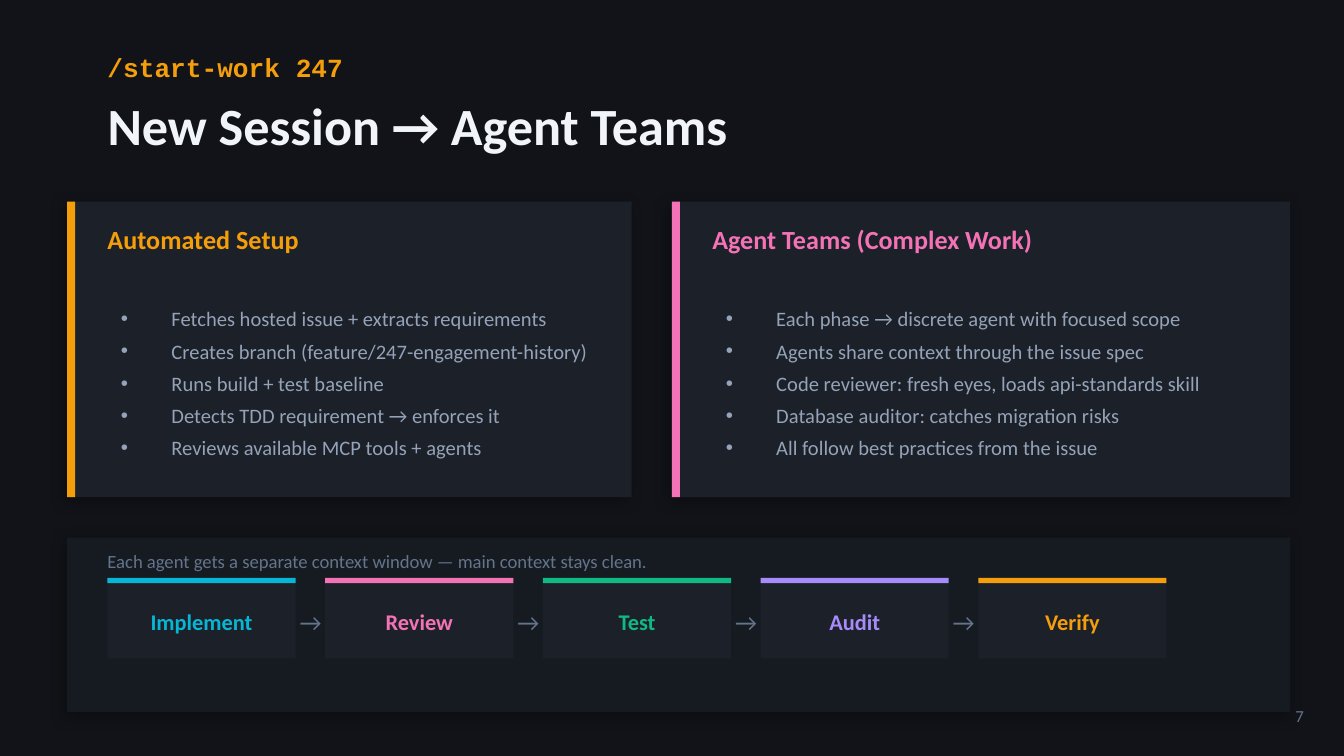
from lxml.etree import SubElement
from pptx import Presentation
from pptx.dml.color import RGBColor
from pptx.enum.shapes import MSO_SHAPE
from pptx.enum.text import MSO_ANCHOR, MSO_AUTO_SIZE, PP_ALIGN
from pptx.oxml.ns import qn
from pptx.util import Inches, Pt

BACKDROP = RGBColor(0x11, 0x13, 0x18)
CARD = RGBColor(0x1C, 0x20, 0x28)
PANEL = RGBColor(0x16, 0x1B, 0x22)
WHITE = RGBColor(0xF1, 0xF5, 0xF9)
BODY = RGBColor(0x94, 0xA3, 0xB8)
MUTED = RGBColor(0x64, 0x74, 0x8B)
AMBER = RGBColor(0xF5, 0x9E, 0x0B)
PINK = RGBColor(0xF4, 0x72, 0xB6)
CYAN = RGBColor(0x06, 0xB6, 0xD4)
GREEN = RGBColor(0x10, 0xB9, 0x81)
VIOLET = RGBColor(0xA7, 0x8B, 0xFA)

CELL = Inches(0.1)
SETUP = [
    "Fetches hosted issue + extracts requirements",
    "Creates branch (feature/247-engagement-history)",
    "Runs build + test baseline",
    "Detects TDD requirement → enforces it",
    "Reviews available MCP tools + agents",
]
TEAMS = [
    "Each phase → discrete agent with focused scope",
    "Agents share context through the issue spec",
    "Code reviewer: fresh eyes, loads api-standards skill",
    "Database auditor: catches migration risks",
    "All follow best practices from the issue",
]
PHASES = [("Implement", CYAN), ("Review", PINK), ("Test", GREEN),
          ("Audit", VIOLET), ("Verify", AMBER)]


def grid(*cells):
    """Convert grid columns and rows to slide lengths."""
    return [round(c * CELL) for c in cells]


def add_block(s, box, color, shadow=False):
    """Add a borderless rectangle, optionally with a soft shadow."""
    sp = s.shapes.add_shape(MSO_SHAPE.RECTANGLE, *grid(*box))
    sp.shadow.inherit = False
    sp.fill.solid()
    sp.fill.fore_color.rgb = color
    sp.line.fill.background()
    if shadow:
        effects = sp.element.spPr.find(qn("a:effectLst"))
        outer = SubElement(effects, qn("a:outerShdw"), blurRad=str(Pt(8)),
                           dist=str(Pt(3)), dir="8100000", algn="bl",
                           rotWithShape="0")
        black = SubElement(outer, qn("a:srgbClr"), val="000000")
        SubElement(black, qn("a:alpha"), val="30000")


def format_text(tf, size, color, bold=False, font="Calibri", align=PP_ALIGN.LEFT, inset=0):
    """Apply frame settings and one run style to all paragraphs."""
    tf.word_wrap = True
    tf.auto_size = MSO_AUTO_SIZE.NONE
    tf.vertical_anchor = MSO_ANCHOR.MIDDLE
    tf.margin_left = tf.margin_right = Inches(inset)
    tf.margin_top = tf.margin_bottom = Inches(inset / 2)
    for p in tf.paragraphs:
        p.alignment = align
        for r in p.runs:
            r.font.name = font
            r.font.size = Pt(size)
            r.font.bold = bold
            r.font.color.rgb = color


def add_label(s, box, text, size, color, **style):
    """Add a formatted text box."""
    tf = s.shapes.add_textbox(*grid(*box)).text_frame
    tf.text = text
    format_text(tf, size, color, **style)


def place(sp, box):
    """Move a placeholder to a box and bring it to the front."""
    sp.left, sp.top, sp.width, sp.height = grid(*box)
    sp.element.getparent().append(sp.element)


def build_header(s, box):
    """Place the command line and the slide title."""
    x, y, w, h = box
    add_label(s, (x, y, 50, 4), "/start-work 247", 14, AMBER,
              bold=True, font="Courier New")
    title = s.shapes.title
    place(title, (x, y + 3.5, w, h - 3.5))
    title.text_frame.text = "New Session → Agent Teams"
    format_text(title.text_frame, 28, WHITE, bold=True)


def build_card(s, box, body, heading, items, color):
    """Place a card with an accent edge, a heading and a bullet list."""
    x, y, w, h = box
    add_block(s, box, CARD, shadow=True)
    add_block(s, (x, y, 0.6, h), color)
    add_label(s, (x + 3, y + 1, w - 4, 3.5), heading, 14, color, bold=True)
    place(body, (x + 3, y + 6, w - 5, h - 7))
    tf = body.text_frame
    tf.text = "\n".join(items)
    for p in tf.paragraphs:
        pPr = p._p.get_or_add_pPr()
        pPr.set("marL", str(Pt(27)))
        pPr.set("indent", str(-Pt(27)))
        SubElement(pPr, qn("a:buChar"), char="•")
        p.space_before = Pt(0)
        p.space_after = Pt(4)
    format_text(tf, 11, BODY, inset=0.1)


def build_phase(s, box, name, color):
    """Place one phase tile with its top accent and name."""
    x, y, w, h = box
    add_block(s, box, CARD)
    add_block(s, (x, y, w, 0.4), color)
    add_label(s, (x, y + 0.5, w, h - 0.5), name, 12, color,
              bold=True, align=PP_ALIGN.CENTER)


def build_pipeline(s, box):
    """Place the panel with its caption and the chain of phases."""
    x, y, w, h = box
    tile_w, tile_h, gap = 14, 6, 2.2
    add_block(s, box, PANEL, shadow=True)
    for i, (name, color) in enumerate(PHASES):
        left, top = x + 3 + i * (tile_w + gap), y + 3
        build_phase(s, (left, top, tile_w, tile_h), name, color)
        if i < len(PHASES) - 1:
            add_label(s, (left + tile_w, top + 0.5, gap, tile_h - 0.5), "→",
                      13, MUTED, align=PP_ALIGN.CENTER)
    add_label(s, (x + 3, y + 0.5, 80, 2.5),
              "Each agent gets a separate context window — main context stays clean.",
              10, MUTED)


def main():
    """Build the slide and save it."""
    prs = Presentation()
    prs.slide_width = Inches(10)
    prs.slide_height = prs.slide_width * 9 // 16
    s = prs.slides.add_slide(prs.slide_layouts.get_by_name("Two Content"))
    s.background.fill.solid()
    s.background.fill.fore_color.rgb = BACKDROP
    left_body, right_body = s.placeholders[1], s.placeholders[2]
    build_header(s, (8, 3, 80, 9))
    build_card(s, (5, 15, 42, 22), left_body, "Automated Setup", SETUP, AMBER)
    build_card(s, (50, 15, 46, 22), right_body, "Agent Teams (Complex Work)", TEAMS, PINK)
    build_pipeline(s, (5, 40, 91, 13))
    add_label(s, (93, 51.5, 5, 3.5), "7", 9, MUTED, align=PP_ALIGN.RIGHT, inset=0.1)
    prs.save("out.pptx")


if __name__ == "__main__":
    main()
